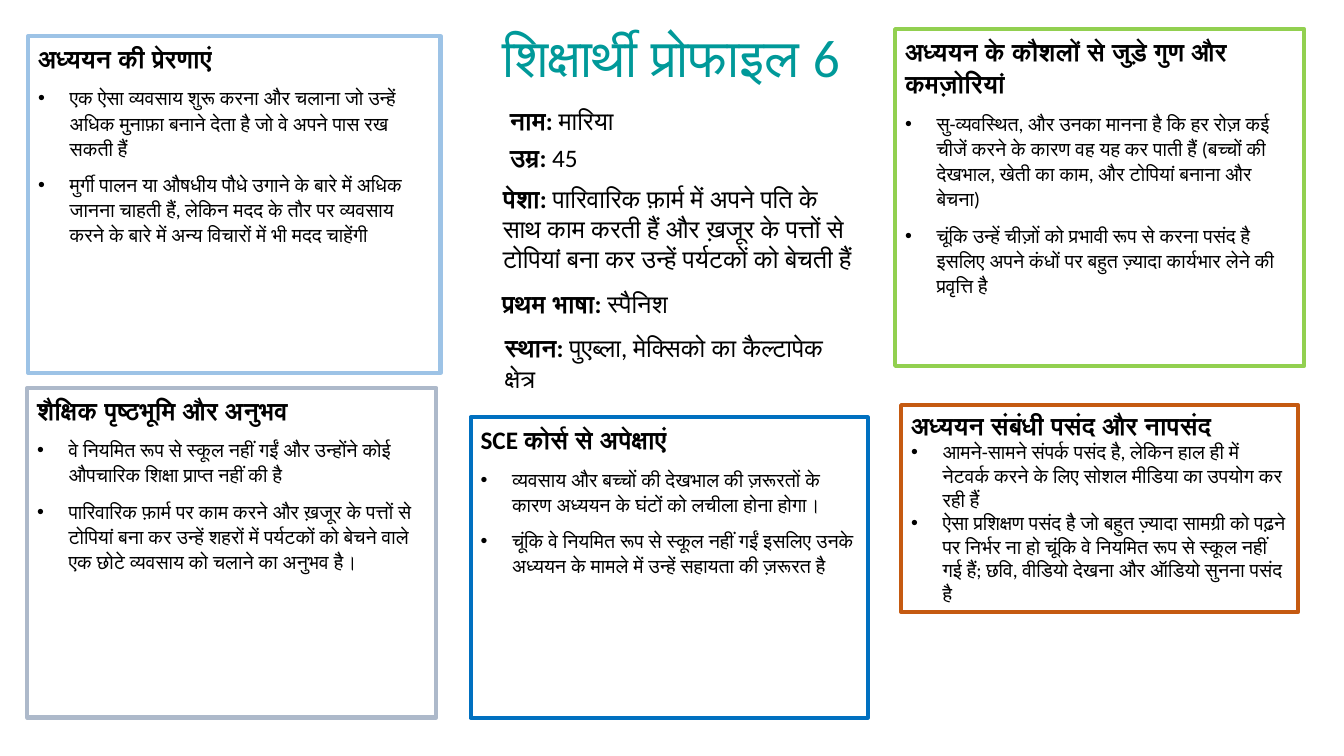
import pptx
import pptx.util
import pptx.dml.color
import pptx.enum.shapes
import pptx.enum.text
import pptx.oxml.ns
import lxml.etree

Pt = pptx.util.Pt
FONT = "Calibri"
INDENT = Pt(22.5)


def style_run(run, size, color="000000", bold=False):
    run.font.name = FONT
    run.font.size = Pt(size)
    run.font.bold = bold
    run.font.color.rgb = pptx.dml.color.RGBColor.from_string(color)


def add_bullet(para):
    properties = para._p.get_or_add_pPr()
    properties.set("marL", str(INDENT))
    properties.set("indent", str(-INDENT))
    for tag, key, value in (("a:buFont", "typeface", "Arial"), ("a:buChar", "char", "•")):
        lxml.etree.SubElement(properties, pptx.oxml.ns.qn(tag)).set(key, value)


deck = pptx.Presentation()
deck.slide_width, deck.slide_height = Pt(960), Pt(540)
page = deck.slides.add_slide(deck.slide_layouts[5])

# Title
title = page.shapes.title
title.left, title.top, title.width, title.height = Pt(351.4), Pt(18.7), Pt(272.9), Pt(49)
frame = title.text_frame
frame.text = "शिक्षार्थी प्रोफाइल 6"
frame.word_wrap = True
frame.auto_size = pptx.enum.text.MSO_AUTO_SIZE.NONE
frame.vertical_anchor = pptx.enum.text.MSO_ANCHOR.TOP
para = frame.paragraphs[0]
para.alignment = pptx.enum.text.PP_ALIGN.LEFT
para.line_spacing = 0.9
para.space_before = Pt(10)
style_run(para.runs[0], 38, "009999")

# Framed boxes: position, line colour, line spacing, space after, heading, bullets
boxes = [
    ((336.2, 298.1, 283.7, 214.6), "0070C0", 1.07, 8, "SCE कोर्स से अपेक्षाएं", [
        "व्यवसाय और बच्चों की देखभाल की ज़रूरतों के कारण अध्ययन के घंटों को लचीला होना होगा।",
        "चूंकि वे नियमित रूप से स्कूल नहीं गईं इसलिए उनके अध्ययन के मामले में उन्हें सहायता की ज़रूरत है"]),
    ((20.2, 25.9, 294.5, 240.5), "9DC3E6", 1.07, 8, "अध्ययन की प्रेरणाएं", [
        "एक ऐसा व्यवसाय शुरू करना और चलाना जो उन्हें अधिक मुनाफ़ा बनाने देता है जो वे अपने पास रख सकती हैं",
        "मुर्गी पालन या औषधीय पौधे उगाने के बारे में अधिक जानना चाहती हैं, लेकिन मदद के तौर पर "
        "व्यवसाय करने के बारे में अन्य विचारों में भी मदद चाहेंगी"]),
    ((639.4, 20.9, 292.3, 240.5), "92D050", 1.07, 8, "अध्ययन के कौशलों से जुड़े गुण और कमज़ोरियां", [
        "सु-व्यवस्थित, और उनका मानना है कि हर रोज़ कई चीजें करने के कारण वह यह कर पाती हैं "
        "(बच्चों की देखभाल, खेती का काम, और टोपियां बनाना और बेचना)",
        "चूंकि उन्हें चीज़ों को प्रभावी रूप से करना पसंद है इसलिए अपने कंधों पर बहुत ज़्यादा "
        "कार्यभार लेने की प्रवृत्ति है"]),
    ((19.4, 277.2, 292.3, 235.4), "ADB9CA", 1.07, 8, "शैक्षिक पृष्ठभूमि और अनुभव", [
        "वे नियमित रूप से स्कूल नहीं गईं और उन्होंने कोई औपचारिक शिक्षा प्राप्त नहीं की है",
        "पारिवारिक फ़ार्म पर काम करने और ख़जूर के पत्तों से टोपियां बना कर उन्हें शहरों में "
        "पर्यटकों को बेचने वाले एक छोटे व्यवसाय को चलाने का अनुभव है।"]),
    ((643.7, 289.4, 283.7, 147.6), "C55A11", 1.0, 0, "अध्ययन संबंधी पसंद और नापसंद", [
        "आमने-सामने संपर्क पसंद है, लेकिन हाल ही में नेटवर्क करने के लिए सोशल मीडिया का उपयोग कर रही हैं",
        "ऐसा प्रशिक्षण पसंद है जो बहुत ज़्यादा सामग्री को पढ़ने पर निर्भर ना हो चूंकि वे नियमित रूप से "
        "स्कूल नहीं गई हैं; छवि, वीडियो देखना और ऑडियो सुनना पसंद है"]),
]
for place, color, spacing, after, heading, bullets in boxes:
    box = page.shapes.add_shape(pptx.enum.shapes.MSO_SHAPE.RECTANGLE, *map(Pt, place))
    box.shadow.inherit = False
    box.fill.solid()
    box.fill.fore_color.rgb = pptx.dml.color.RGBColor.from_string("FFFFFF")
    box.line.color.rgb = pptx.dml.color.RGBColor.from_string(color)
    box.line.width = Pt(3)
    frame = box.text_frame
    frame.word_wrap = True
    frame.vertical_anchor = pptx.enum.text.MSO_ANCHOR.TOP
    frame.text = "\n".join([heading] + bullets)
    for index, para in enumerate(frame.paragraphs):
        para.alignment = pptx.enum.text.PP_ALIGN.LEFT
        para.line_spacing = spacing
        para.space_after = Pt(after)
        if index == 0:
            style_run(para.runs[0], 18, bold=True)
        else:
            add_bullet(para)
            style_run(para.runs[0], 14)

# Learner details: position, label, value
details = [
    ((357.1, 72, 270.7, 28.8), "नाम:", "मारिया"),
    ((357.1, 97.9, 228.2, 28.8), "उम्र:", "45"),
    ((352.1, 127.4, 267.1, 72.7), "पेशा:",
     "पारिवारिक फ़ार्म में अपने पति के साथ काम करती हैं और ख़जूर के पत्तों से टोपियां बना कर "
     "उन्हें पर्यटकों को बेचती हैं"),
    ((351.4, 202.3, 248.4, 28.8), "प्रथम भाषा:", "स्पैनिश"),
    ((353.5, 234, 248.4, 51.1), "स्थान:", "पुएब्ला, मेक्सिको का कैल्टापेक क्षेत्र"),
]
for place, label, value in details:
    box = page.shapes.add_textbox(*map(Pt, place))
    box.text_frame.word_wrap = True
    para = box.text_frame.paragraphs[0]
    for text, bold in ((label, True), (" " + value, False)):
        span = para.add_run()
        span.text = text
        style_run(span, 18, bold=bold)

deck.save("out.pptx")
